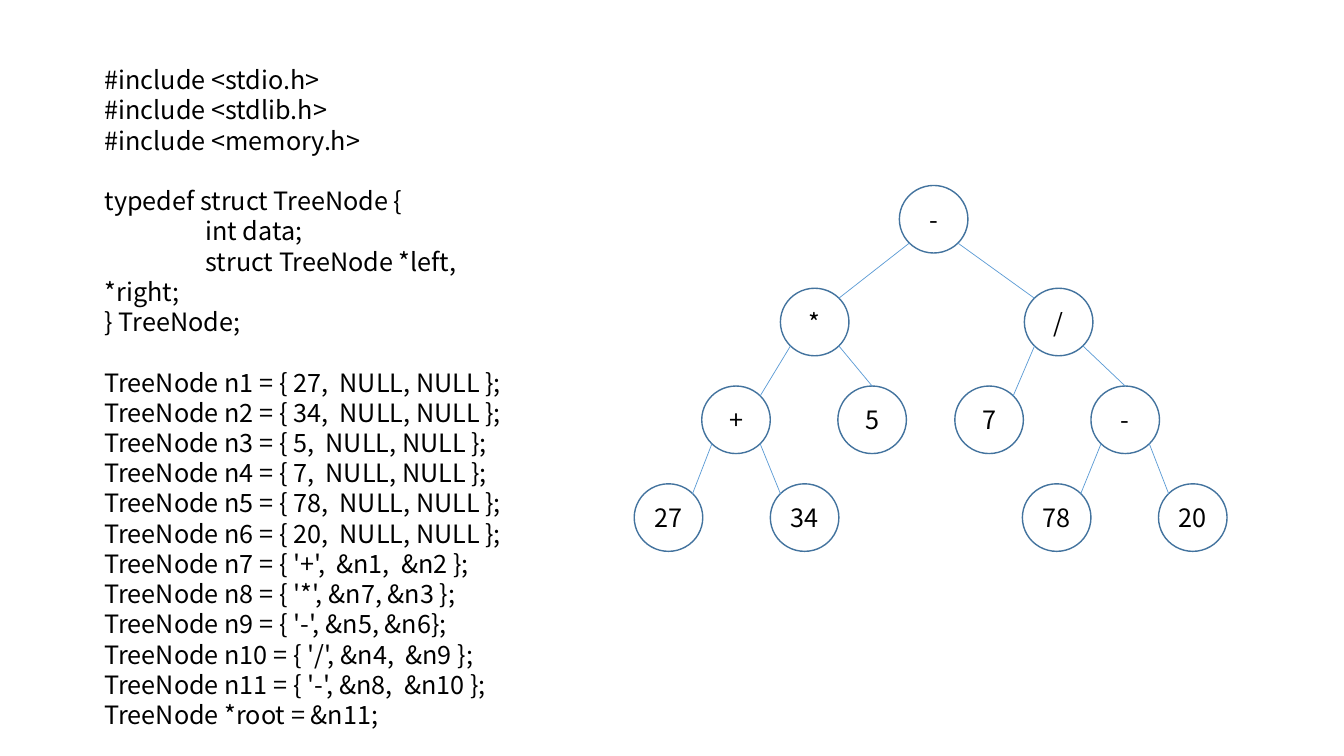
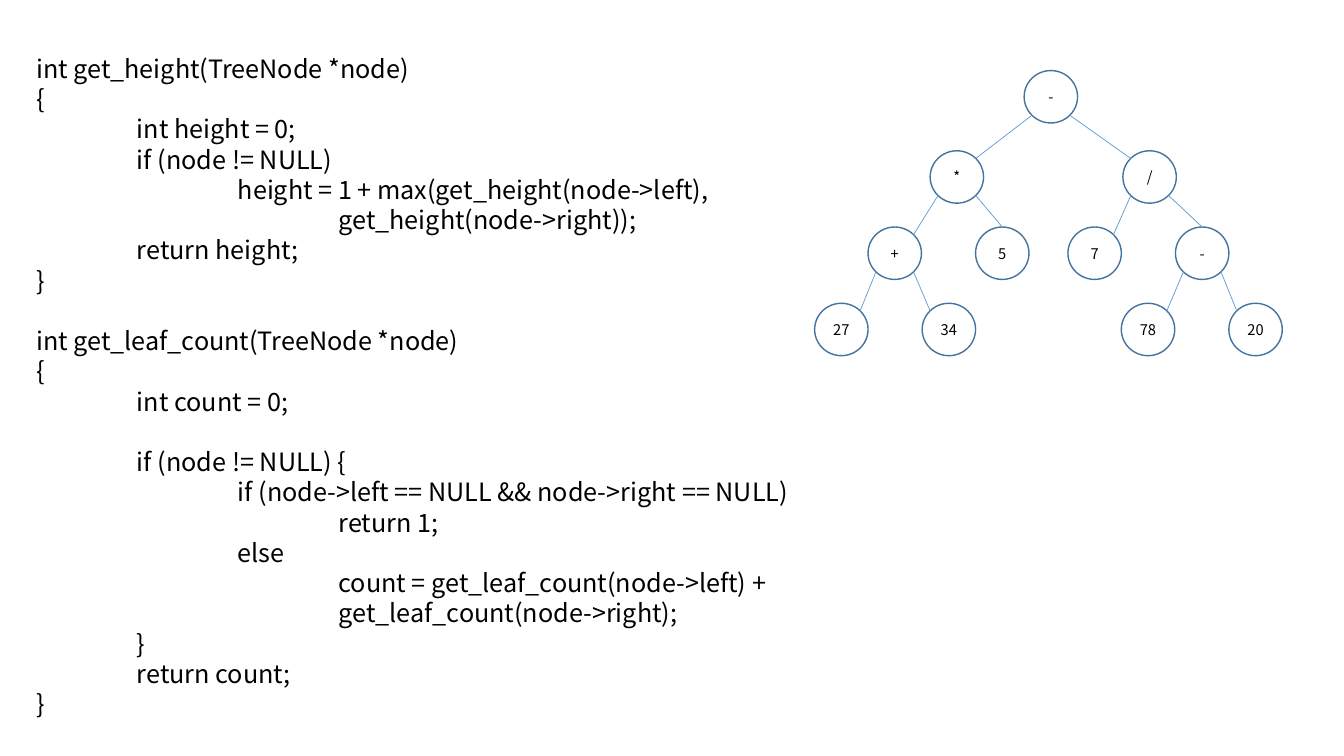
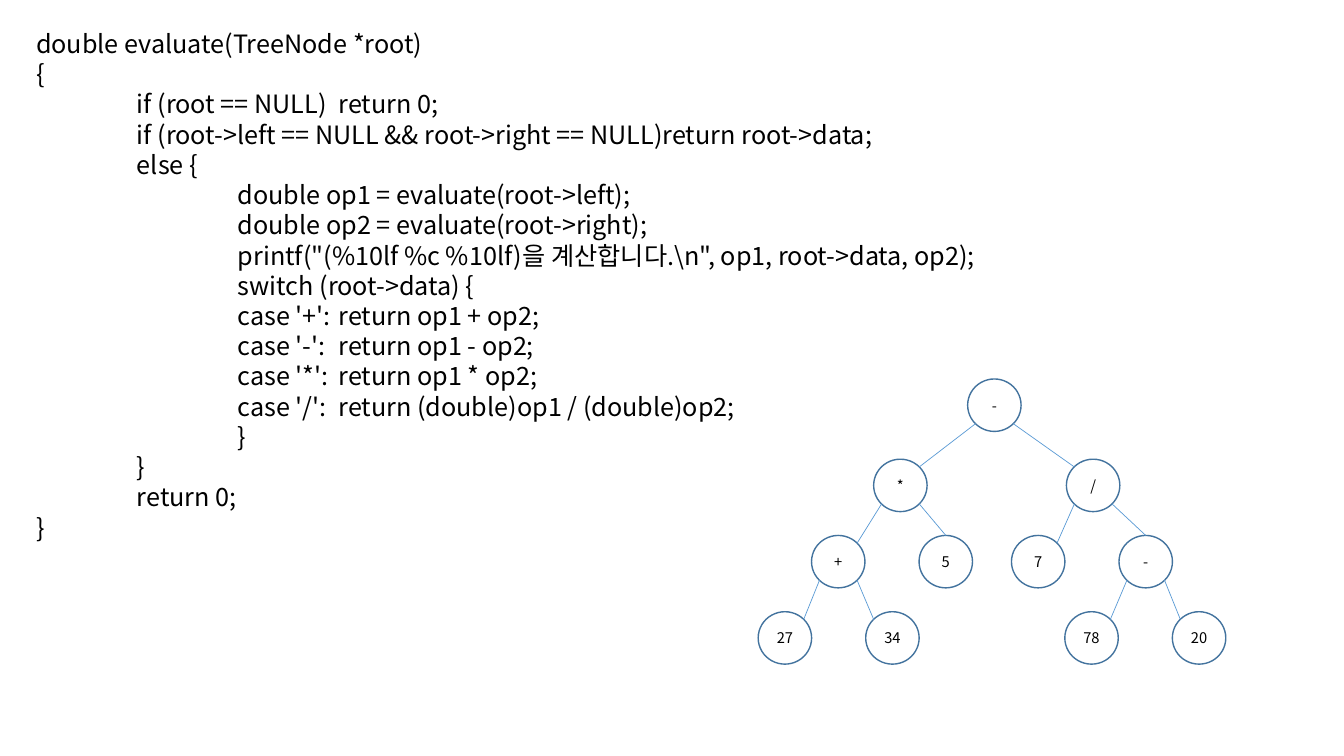
from dataclasses import dataclass
from typing import Any

from lxml import etree
from pptx import Presentation
from pptx.dml.color import RGBColor
from pptx.enum import shapes, text
from pptx.oxml import ns
from pptx.util import Inches, Pt

INK = RGBColor(0x00, 0x00, 0x00)
RING = RGBColor(0x43, 0x73, 0x9E)
EDGE = RGBColor(0x5B, 0x9B, 0xD5)
FACE = "Noto Sans CJK KR"
PITCH = Pt(21.6)
TABS = (1, 2, 3)
DIAG = 0.35

CODE_FRAME = {"word_wrap": True, "auto_size": text.MSO_AUTO_SIZE.NONE}
NODE_FRAME = {
    "word_wrap": False,
    "vertical_anchor": text.MSO_ANCHOR.MIDDLE,
    "margin_left": 0,
    "margin_right": 0,
    "margin_top": 0,
    "margin_bottom": 0,
}


@dataclass(frozen=True)
class Node:
    label: str
    x: float
    level: int


@dataclass(frozen=True)
class Link:
    parent: str
    child: str
    side: int
    top: bool = False


@dataclass(frozen=True)
class Tree:
    left: float
    top: float
    wide: float = 0.53
    high: float = 0.52
    across: float = 0.79
    down: float = 0.78
    size: float = 10.5


@dataclass(frozen=True)
class Page:
    box: tuple[float, float, float, float]
    code: str
    tree: Tree


LEVELS = (0, 1.02, 1.99, 2.96)
NODES = {
    "root": Node("-", 2.63, 0),
    "times": Node("*", 1.45, 1),
    "over": Node("/", 3.87, 1),
    "plus": Node("+", 0.67, 2),
    "five": Node("5", 2.02, 2),
    "seven": Node("7", 3.18, 2),
    "minus": Node("-", 4.53, 2),
    "n27": Node("27", 0, 3),
    "n34": Node("34", 1.35, 3),
    "n78": Node("78", 3.85, 3),
    "n20": Node("20", 5.2, 3),
}
LINKS = (
    Link("root", "times", -1),
    Link("root", "over", 1),
    Link("times", "plus", -1),
    Link("times", "five", 1, True),
    Link("over", "seven", -1),
    Link("over", "minus", 1, True),
    Link("plus", "n27", -1),
    Link("plus", "n34", 1),
    Link("minus", "n78", -1),
    Link("minus", "n20", 1),
)

STRUCT = """
#include <stdio.h>
#include <stdlib.h>
#include <memory.h>

typedef struct TreeNode {
\tint data;
\tstruct TreeNode *left, *right;
} TreeNode;

TreeNode n1 = { 27,  NULL, NULL };
TreeNode n2 = { 34,  NULL, NULL };
TreeNode n3 = { 5,  NULL, NULL };
TreeNode n4 = { 7,  NULL, NULL };
TreeNode n5 = { 78,  NULL, NULL };
TreeNode n6 = { 20,  NULL, NULL };
TreeNode n7 = { '+',  &n1,  &n2 };
TreeNode n8 = { '*', &n7, &n3 };
TreeNode n9 = { '-', &n5, &n6};
TreeNode n10 = { '/', &n4,  &n9 };
TreeNode n11 = { '-', &n8,  &n10 };
TreeNode *root = &n11;
"""

COUNTS = """
int get_height(TreeNode *node)
{
\tint height = 0;
\tif (node != NULL)
\t\theight = 1 + max(get_height(node->left),
\t\t\tget_height(node->right));
\treturn height;
}

int get_leaf_count(TreeNode *node)
{
\tint count = 0;

\tif (node != NULL) {
\t\tif (node->left == NULL && node->right == NULL)
\t\t\treturn 1;
\t\telse
\t\t\tcount = get_leaf_count(node->left) +
\t\t\tget_leaf_count(node->right);
\t}
\treturn count;
}
"""

EVAL = """
double evaluate(TreeNode *root)
{
\tif (root == NULL)\treturn 0;
\tif (root->left == NULL && root->right == NULL)return root->data;
\telse {
\t\tdouble op1 = evaluate(root->left);
\t\tdouble op2 = evaluate(root->right);
\t\tprintf("(%10lf %c %10lf)을 계산합니다.\\n", op1, root->data, op2);
\t\tswitch (root->data) {
\t\tcase '+':\treturn op1 + op2;
\t\tcase '-':\treturn op1 - op2;
\t\tcase '*':\treturn op1 * op2;
\t\tcase '/':\treturn (double)op1 / (double)op2;
\t\t}
\t}
\treturn 0;
}
"""

PAGES = (
    Page((0.94, 0.59, 4.45, 6.46), STRUCT, Tree(6.29, 1.84, 0.68, 0.67, 1, 1, 18)),
    Page((0.26, 0.48, 8.12, 6.77), COUNTS, Tree(8.08, 0.7)),
    Page((0.26, 0.23, 9.73, 5.55), EVAL, Tree(7.52, 3.76)),
)


def style(item: Any, values: dict[str, Any]) -> None:
    for name, value in values.items():
        setattr(item, name, value)


def write(para: Any, words: str, size: float) -> None:
    run = para.add_run()
    run.text = words
    style(run.font, {"name": FACE, "size": Pt(size)})
    run.font.color.rgb = INK
    props = run._r.get_or_add_rPr()
    etree.SubElement(props, ns.qn("a:ea"), typeface=FACE)


def set_tabs(para: Any) -> None:
    stops = etree.SubElement(para._p.get_or_add_pPr(), ns.qn("a:tabLst"))
    for inch in TABS:
        etree.SubElement(stops, ns.qn("a:tab"), pos=str(Inches(inch)), algn="l")


def draw_code(slide: Any, page: Page) -> None:
    frame = slide.shapes.add_textbox(*map(Inches, page.box)).text_frame
    style(frame, CODE_FRAME)
    para, gap = frame.paragraphs[0], 0
    for index, line in enumerate(page.code.strip("\n").split("\n")):
        if not line:
            gap = PITCH
            continue
        if index:
            para = frame.add_paragraph()
        style(para, {"line_spacing": PITCH, "space_before": gap})
        set_tabs(para)
        write(para, line, 18)
        gap = 0


def place(tree: Tree, key: str) -> tuple[float, float]:
    node = NODES[key]
    high = LEVELS[node.level] * tree.down
    return tree.left + node.x * tree.across, tree.top + high


def draw_node(group: Any, tree: Tree, key: str) -> None:
    box = (*place(tree, key), tree.wide, tree.high)
    oval = group.shapes.add_shape(shapes.MSO_SHAPE.OVAL, *map(Inches, box))
    oval.shadow.inherit = False
    oval.fill.background()
    oval.line.color.rgb = RING
    oval.line.width = Pt(1)
    style(oval.text_frame, NODE_FRAME)
    para = oval.text_frame.paragraphs[0]
    para.alignment = text.PP_ALIGN.CENTER
    write(para, NODES[key].label, tree.size)


def draw_link(group: Any, tree: Tree, link: Link) -> None:
    def spot(key: str, across: float, down: float) -> tuple[float, float]:
        x, y = place(tree, key)
        return x + (0.5 + across) * tree.wide, y + (0.5 + down) * tree.high

    start = spot(link.parent, link.side * DIAG, DIAG)
    across, down = (0, -0.5) if link.top else (-link.side * DIAG, -DIAG)
    end = spot(link.child, across, down)
    line = group.shapes.add_connector(
        shapes.MSO_CONNECTOR.STRAIGHT, *map(Inches, start + end)
    )
    line.line.color.rgb = EDGE
    line.line.width = Pt(0.5)
    etree.SubElement(line._element.spPr, ns.qn("a:effectLst"))


def draw_tree(slide: Any, tree: Tree) -> None:
    group = slide.shapes.add_group_shape()
    for key in NODES:
        draw_node(group, tree, key)
    for link in LINKS:
        draw_link(group, tree, link)


def main() -> None:
    deck = Presentation()
    style(deck, {"slide_width": Inches(13.33), "slide_height": Inches(7.5)})
    for page in PAGES:
        slide = deck.slides.add_slide(deck.slide_layouts[6])
        draw_code(slide, page)
        draw_tree(slide, page.tree)
    deck.save("out.pptx")


if __name__ == "__main__":
    main()
